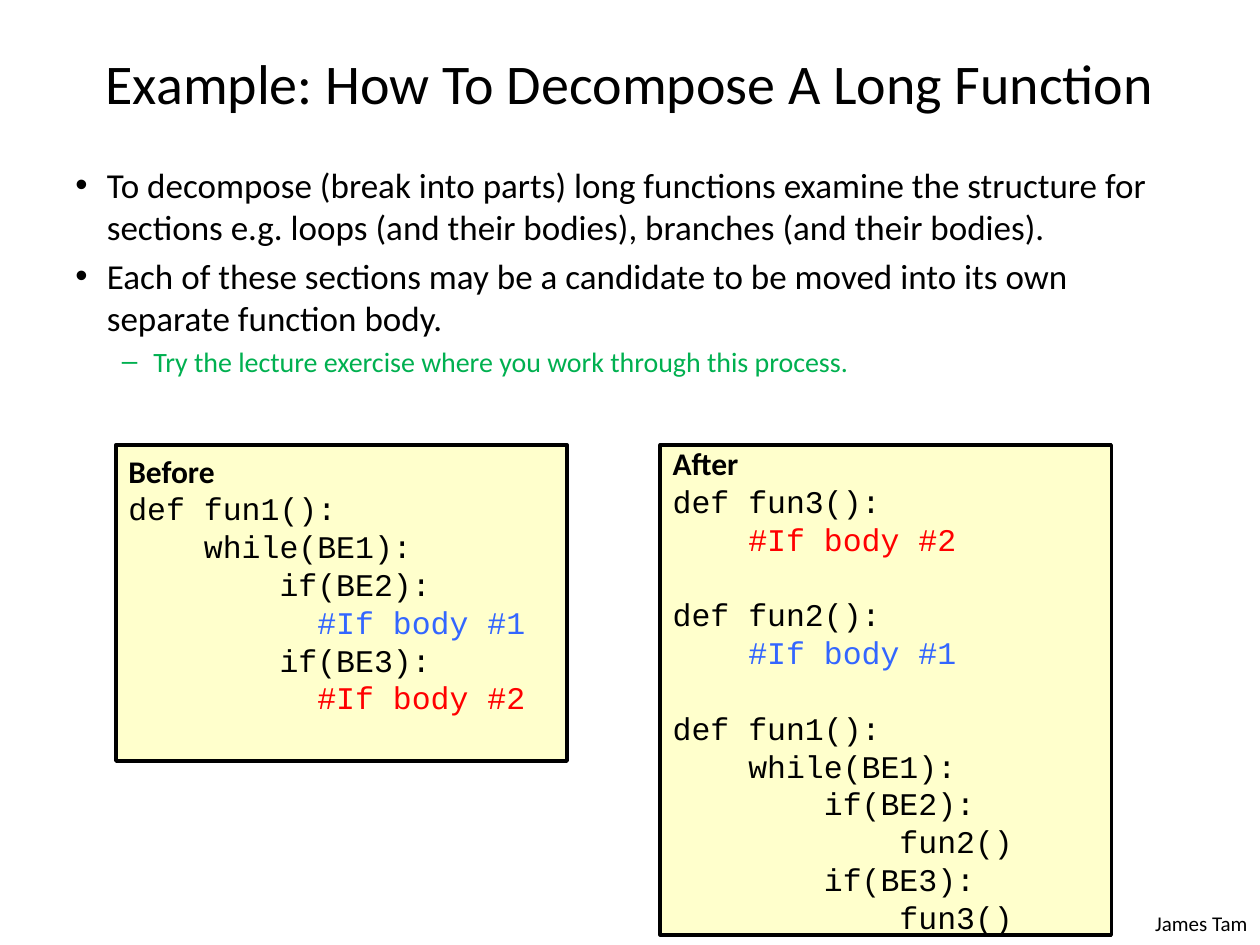
from dataclasses import dataclass

from lxml import etree
from pptx import Presentation
from pptx.dml.color import RGBColor
from pptx.enum.shapes import MSO_SHAPE
from pptx.enum.text import MSO_ANCHOR, PP_ALIGN
from pptx.oxml.ns import qn
from pptx.slide import Slide
from pptx.util import Inches, Pt

RECT = MSO_SHAPE.RECTANGLE
TOP, MID = MSO_ANCHOR.TOP, MSO_ANCHOR.MIDDLE
LEFT, MIDDLE, RIGHT = PP_ALIGN.LEFT, PP_ALIGN.CENTER, PP_ALIGN.RIGHT

BLACK, BLUE, RED, GREEN = "000000", "3366FF", "FF0000", "00B050"
CREAM = "FFFFCC"
SANS, MONO = "Calibri", "Courier New"
CHAR = 0.15
LINE = 21.6


def tint(code):
    return RGBColor.from_string(code)


@dataclass
class Deck:
    slide: Slide

    def run(self, para, text, size, color=BLACK, font=SANS, bold=False):
        run = para.add_run()
        run.text = text
        run.font.name = font
        run.font.size = Pt(size)
        run.font.bold = bold
        run.font.color.rgb = tint(color)

    def inset(self, para, left, hang=0):
        props = para._p.get_or_add_pPr()
        props.set("marL", str(Inches(left)))
        props.set("indent", str(Inches(-hang)))
        return props

    def next(self, frame, first):
        return frame.paragraphs[0] if first else frame.add_paragraph()

    def box(self, left, top, width, height, anchor=TOP):
        shape = self.slide.shapes.add_textbox(
            Inches(left), Inches(top), Inches(width), Inches(height))
        frame = shape.text_frame
        frame.word_wrap = True
        frame.vertical_anchor = anchor
        return frame

    def label(self, text, place, size, align, anchor=TOP):
        para = self.box(*place, anchor).paragraphs[0]
        para.alignment = align
        self.run(para, text, size)

    def points(self, items, place):
        frame = self.box(*place)
        for pos, (text, mark, left, size, color) in enumerate(items):
            para = self.next(frame, pos == 0)
            para.space_before = Pt(size * 0.2)
            props = self.inset(para, left, 0.25)
            face = etree.SubElement(props, qn("a:buFont"))
            face.set("typeface", "Arial")
            etree.SubElement(props, qn("a:buChar")).set("char", mark)
            self.run(para, text, size, color)

    def code(self, title, lines, left, height, foot=0):
        shape = self.slide.shapes.add_shape(
            RECT, Inches(left), Inches(3.53), Inches(3.58), Inches(height))
        shape.shadow.inherit = False
        shape.fill.solid()
        shape.fill.fore_color.rgb = tint(CREAM)
        shape.line.color.rgb = tint(BLACK)
        shape.line.width = Pt(2)
        frame = shape.text_frame
        frame.word_wrap = True
        frame.vertical_anchor = MID
        frame.margin_bottom = Inches(0.05 + foot)
        head = frame.paragraphs[0]
        head.alignment = LEFT
        self.run(head, title, 18, bold=True)
        for text, depth, color, gap in lines:
            para = frame.add_paragraph()
            para.alignment = LEFT
            self.inset(para, depth * CHAR)
            para.space_before = Pt(gap * LINE)
            self.run(para, text, 18, color, MONO)


def main():
    prs = Presentation()
    prs.slide_width, prs.slide_height = Inches(10), Inches(7.5)
    deck = Deck(prs.slides.add_slide(prs.slide_layouts[6]))

    deck.label("James Tam", (8.67, 7.18, 1.33, 0.3), 12, RIGHT)
    deck.label("Example: How To Decompose A Long Function",
               (0.5, 0.3, 9, 0.7), 32, MIDDLE, MID)
    deck.points([
        ("To decompose (break into parts) long functions examine the "
         "structure for sections e.g. loops (and their bodies), branches "
         "(and their bodies).", "•", 0.25, 20, BLACK),
        ("Each of these sections may be a candidate to be moved into its "
         "own separate function body.", "•", 0.25, 20, BLACK),
        ("Try the lecture exercise where you work through this process.",
         "–", 0.62, 16, GREEN),
    ], (0.5, 1.25, 9, 5.92))

    deck.code("Before", [
        ("def fun1():", 0, BLACK, 0),
        ("while(BE1):", 4, BLACK, 0),
        ("if(BE2):", 8, BLACK, 0),
        ("#If body #1", 10, BLUE, 0),
        ("if(BE3):", 8, BLACK, 0),
        ("#If body #2", 10, RED, 0),
    ], 0.92, 2.51, LINE / 72)
    deck.code("After", [
        ("def fun3():", 0, BLACK, 0),
        ("#If body #2", 4, RED, 0),
        ("def fun2():", 0, BLACK, 1),
        ("#If body #1", 4, BLUE, 0),
        ("def fun1():", 0, BLACK, 1),
        ("while(BE1):", 4, BLACK, 0),
        ("if(BE2):", 8, BLACK, 0),
        ("fun2()", 12, BLACK, 0),
        ("if(BE3):", 8, BLACK, 0),
        ("fun3()", 12, BLACK, 0),
    ], 5.24, 3.89)

    prs.save("out.pptx")


if __name__ == "__main__":
    main()
